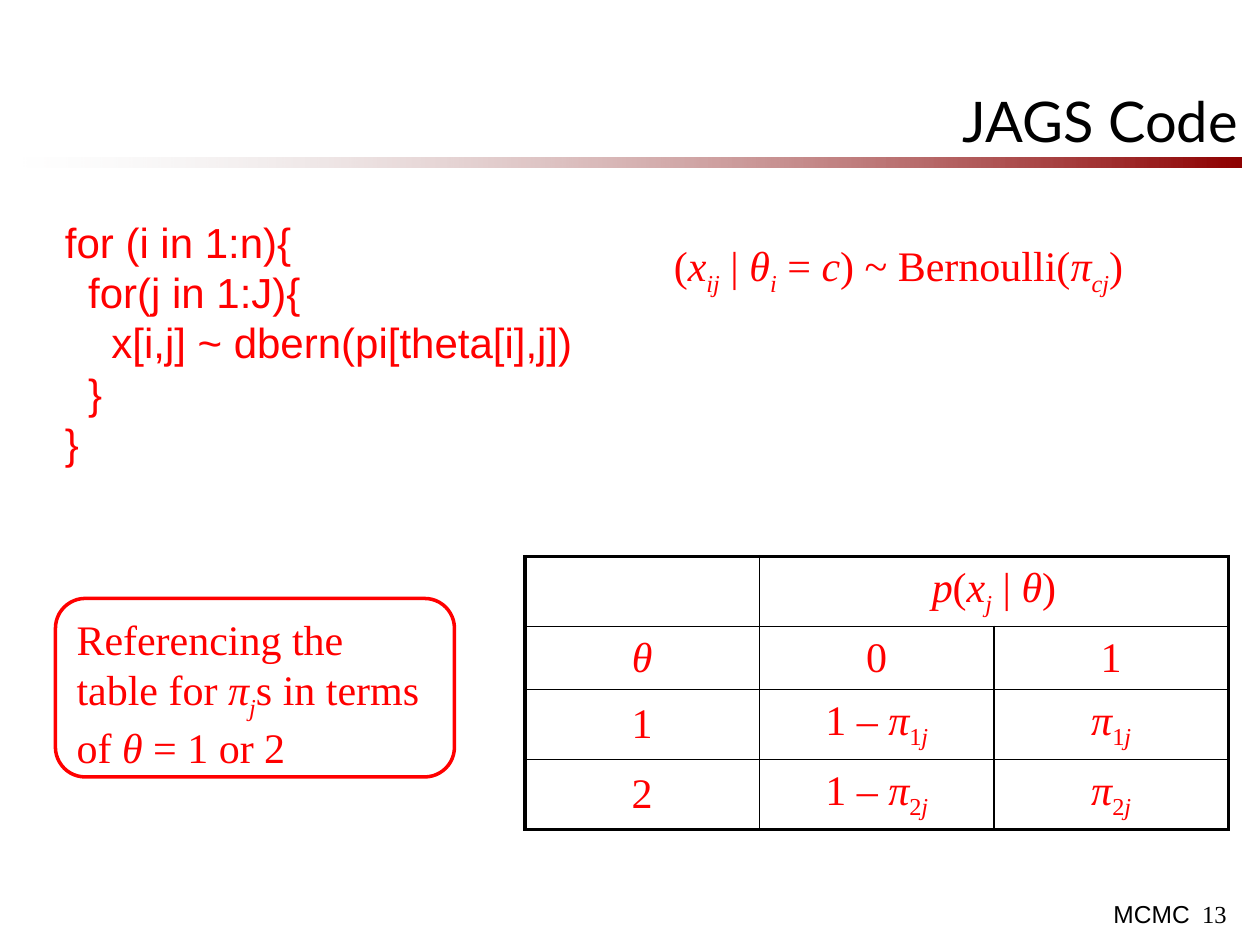
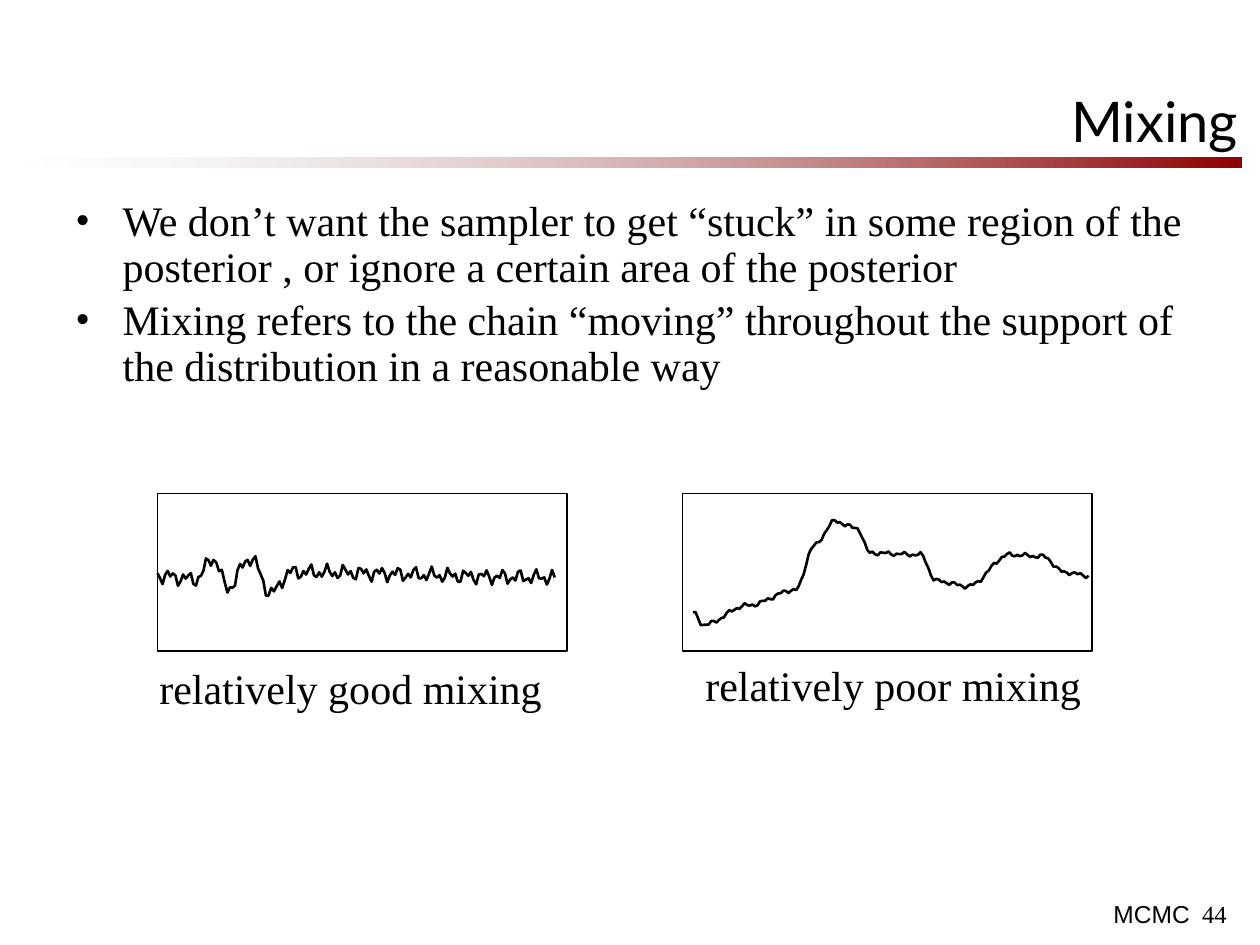
from math import cos, pi, sin

from lxml.etree import SubElement
from pptx import Presentation
from pptx.dml.color import RGBColor
from pptx.enum.shapes import MSO_SHAPE as SHAPE
from pptx.enum.text import MSO_ANCHOR as ANCHOR, PP_ALIGN as ALIGN
from pptx.oxml.ns import qn
from pptx.util import Pt

BLACK = RGBColor(0, 0, 0)
WHITE = RGBColor(255, 255, 255)
RED = RGBColor(255, 0, 0)
GREY = RGBColor(0xCE, 0xCE, 0xCE)
MAROON = RGBColor(0x8E, 0, 0)
SERIF, SANS, TITLE_FONT = "Times New Roman", "Arial", "Lato"

CODE_INDENT = 13.3      # one nesting level of the listing
BULLET_INDENT = 27
PARAGRAPH_GAP = 4.8     # a fifth of the 24 pt text
INNER_LINE, OUTER_LINE = 1, 2.25
TRACE_STEP = 1.5        # distance between two draws of a chain


def add_runs(paragraph, pieces, font=SERIF, size=24, color=BLACK):
    """Each piece is (text, style); style may hold i (italic) and s (subscript)."""
    for text, style in pieces:
        run = paragraph.add_run()
        run.text = text
        run.font.name = font
        run.font.size = Pt(size)
        run.font.color.rgb = color
        run.font.italic = "i" in style
        if "s" in style:
            run.font._element.set("baseline", "-25000")


def add_text(slide, box, pieces, align=ALIGN.LEFT, wrap=True, anchor=ANCHOR.TOP, **look):
    frame = slide.shapes.add_textbox(*map(Pt, box)).text_frame
    frame.word_wrap = wrap
    frame.vertical_anchor = anchor
    frame.paragraphs[0].alignment = align
    add_runs(frame.paragraphs[0], pieces, **look)
    return frame


prs = Presentation()
prs.slide_width, prs.slide_height = Pt(720), Pt(540)

# Title, fading band and footer of every slide
slides = []
for title, number in [("JAGS Code", "13"), ("Mixing", "44")]:
    slide = prs.slides.add_slide(prs.slide_layouts[6])
    band = slide.shapes.add_shape(SHAPE.RECTANGLE, Pt(12), Pt(90), Pt(697.5), Pt(6))
    band.shadow.inherit = False
    band.line.fill.background()
    band.fill.gradient()
    band.fill.gradient_angle = 0
    for stop, position, color in zip(band.fill.gradient_stops, (0, 1), (GREY, MAROON)):
        stop.position = position
        stop.color.rgb = color
    clear_end = band._element.xpath(".//a:gs/a:srgbClr")[0]
    SubElement(clear_end, qn("a:alpha"), val="0")

    add_text(slide, (459, 510, 228, 29.5), [("MCMC", "")], ALIGN.RIGHT, font=SANS, size=14)
    add_text(slide, (540, 510, 168, 37.5), [(number, "")], ALIGN.RIGHT, size=14)
    add_text(slide, (18, 12, 696.5, 79.5), [(title, "")], ALIGN.RIGHT,
             anchor=ANCHOR.BOTTOM, font=TITLE_FONT, size=32)
    slides.append(slide)
code_slide, mixing_slide = slides

# Code listing, indented by nesting depth
listing = add_text(code_slide, (30, 120, 408, 153), [("for (i in 1:n){", "")],
                   font=SANS, color=RED)
for depth, line in [(1, "for(j in 1:J){"), (2, "x[i,j] ~ dbern(pi[theta[i],j])"),
                    (1, "}"), (0, "}")]:
    paragraph = listing.add_paragraph()
    paragraph._p.get_or_add_pPr().set("marL", str(Pt(CODE_INDENT * depth)))
    add_runs(paragraph, [(line, "")], font=SANS, color=RED)

# Remark on the table
remark = code_slide.shapes.add_shape(SHAPE.ROUNDED_RECTANGLE, Pt(31.7), Pt(342), Pt(228), Pt(102))
remark.shadow.inherit = False
remark.fill.solid()
remark.fill.fore_color.rgb = WHITE
remark.line.color.rgb = RED
remark.line.width = Pt(2)
remark.text_frame.vertical_anchor = ANCHOR.TOP
remark.text_frame.paragraphs[0].alignment = ALIGN.LEFT
add_runs(remark.text_frame.paragraphs[0],
         [("Referencing the table for ", ""), ("π", "i"), ("j", "is"),
          ("s in terms of ", ""), ("θ", "i"), (" = 1 or 2", "")], color=RED)

# Model formula
add_text(code_slide, (378, 133.5, 310, 36),
         [("(", ""), ("x", "i"), ("ij", "is"), (" | ", ""), ("θ", "i"), ("i", "is"),
          (" = ", ""), ("c", "i"), (") ~ Bernoulli(", ""), ("π", "i"), ("cj", "is"),
          (")", "")], color=RED)

# Conditional probability table: two header rows, then one row per class
rows = [
    [[], [("p", "i"), ("(", ""), ("x", "i"), ("j", "is"), (" | ", ""), ("θ", "i"), (")", "")], []],
    [[("θ", "i")], [("0", "")], [("1", "")]],
]
for theta in "12":
    success = [("π", "i"), (theta, "s"), ("j", "is")]
    rows.append([[(theta, "")], [("1 – ", "")] + success, success])

table = code_slide.shapes.add_table(4, 3, Pt(300), Pt(318), Pt(402), Pt(144)).table
table.first_row = table.horz_banding = False
table.cell(0, 1).merge(table.cell(0, 2))
for r, row in enumerate(rows):
    for c, pieces in enumerate(row):
        cell = table.cell(r, c)
        cell.vertical_anchor = ANCHOR.MIDDLE
        if pieces:
            paragraph = cell.text_frame.paragraphs[0]
            paragraph.alignment = ALIGN.CENTER
            paragraph.space_before = Pt(PARAGRAPH_GAP)
            add_runs(paragraph, pieces, color=RED)
        on_edge = {"L": c == 0, "R": c == 2 or cell.is_merge_origin, "T": r == 0, "B": r == 3}
        for side, is_outer in on_edge.items():
            border = SubElement(cell._tc.get_or_add_tcPr(), qn("a:ln" + side),
                                w=str(Pt(OUTER_LINE if is_outer else INNER_LINE)))
            SubElement(SubElement(border, qn("a:solidFill")), qn("a:srgbClr"), val=str(BLACK))
        cell.fill.background()

# Bullets about mixing
stuck = ("We don’t want the sampler to get “stuck” in some region of the posterior , "
         "or ignore a certain area of the posterior")
moving = ("Mixing refers to the chain “moving” throughout the support of the distribution "
          "in a reasonable way")
body = add_text(mixing_slide, (36, 111, 648, 390), [(stuck, "")])
add_runs(body.add_paragraph(), [(moving, "")])
for paragraph in body.paragraphs:
    paragraph.line_spacing = 0.9
    paragraph.space_before = Pt(PARAGRAPH_GAP)
    props = paragraph._p.get_or_add_pPr()
    props.set("marL", str(Pt(BULLET_INDENT)))
    props.set("indent", str(Pt(-BULLET_INDENT)))
    SubElement(props, qn("a:buFont"), typeface=SERIF)
    SubElement(props, qn("a:buChar"), char="•")

# Turning points of each chain; the good one settles on one level, the poor one drifts
good_turns = [(90, 329), (112, 331), (122, 319), (130, 336), (143, 319), (155, 339),
              (166, 327), (317, 330)]
poor_turns = [(396, 350), (402, 357), (427, 346), (455, 337), (465, 312), (477, 298),
              (490, 302), (497, 316), (526, 317), (535, 332), (553, 335), (577, 317),
              (596, 318), (608, 327), (622, 329)]

# Framed traces with captions
for left, turns, jitter, caption, caption_box in [
    (90, good_turns, 5, "relatively good mixing", (84, 375, 244, 36)),
    (390, poor_turns, 1.5, "relatively poor mixing", (396, 373.3, 231, 36)),
]:
    frame = mixing_slide.shapes.add_shape(SHAPE.RECTANGLE, Pt(left), Pt(282), Pt(234), Pt(90))
    frame.shadow.inherit = False
    frame.fill.solid()
    frame.fill.fore_color.rgb = WHITE
    frame.line.color.rgb = BLACK
    frame.line.width = Pt(1)

    # Ease from turn to turn and add a fast wave that swells and fades
    draws = []
    for (x0, y0), (x1, y1) in zip(turns, turns[1:]):
        count = round((x1 - x0) / TRACE_STEP)
        for step in range(count):
            share = step / count
            x = x0 + (x1 - x0) * share
            level = y0 + (y1 - y0) * (1 - cos(pi * share)) / 2
            draws.append((Pt(x), Pt(level + jitter * sin(x) * cos(0.37 * x))))
    draws.append(tuple(map(Pt, turns[-1])))

    builder = mixing_slide.shapes.build_freeform(*draws[0])
    builder.add_line_segments(draws[1:], close=False)
    chain = builder.convert_to_shape()
    chain.shadow.inherit = False
    chain.fill.background()
    chain.line.color.rgb = BLACK
    chain.line.width = Pt(1.5)

    add_text(mixing_slide, caption_box, [(caption, "")], wrap=False)

prs.save("out.pptx")
